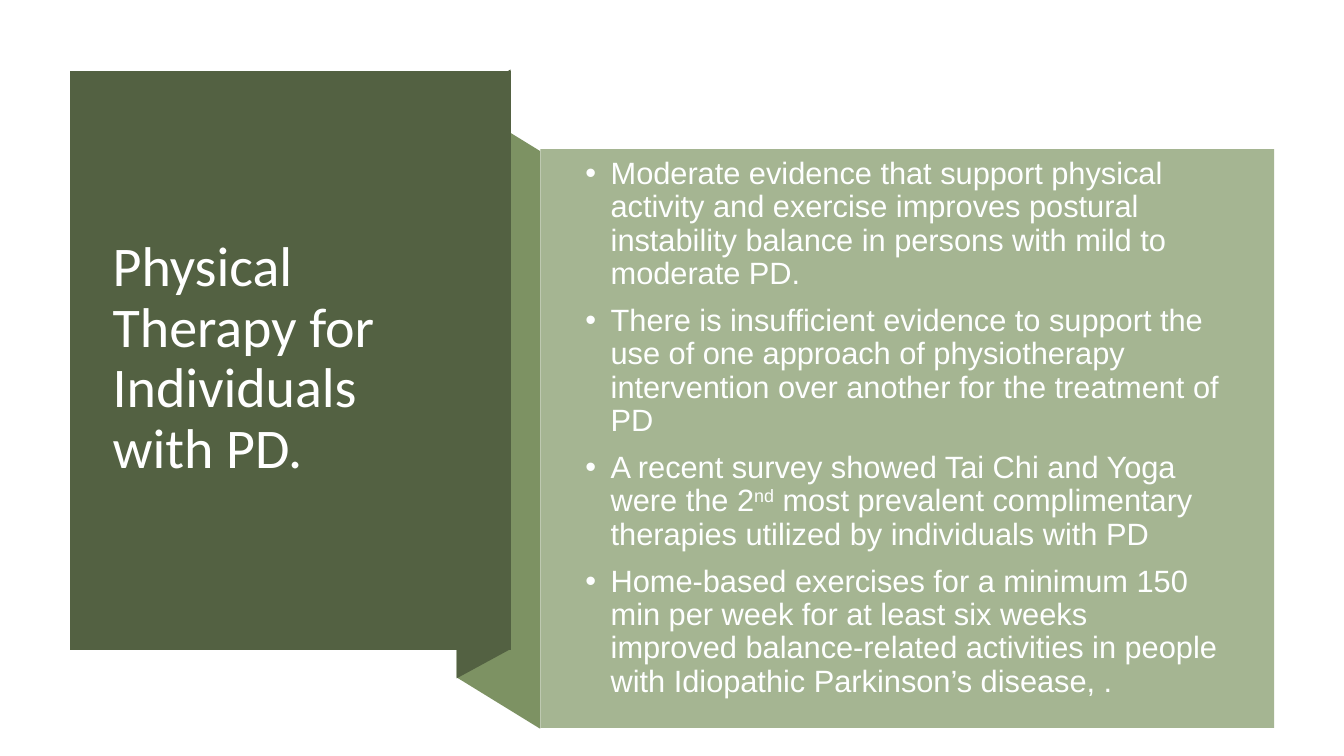
"""Build the slide on physical therapy for individuals with PD."""
from dataclasses import dataclass

import pptx
import pptx.dml.color
import pptx.enum.shapes
import pptx.enum.text
import pptx.oxml
import pptx.oxml.ns
import pptx.util

Pt = pptx.util.Pt
DARK, MID, LIGHT = "536142", "7D9263", "A5B592"


@dataclass(frozen=True)
class Panel:
    """A filled outline given by its corners in points."""
    corners: tuple[tuple[float, float], ...]
    color: str


@dataclass(frozen=True)
class Box:
    """A rectangle in points."""
    left: float
    top: float
    width: float
    height: float

    def lengths(self) -> tuple[int, ...]:
        """Return the rectangle as slide lengths."""
        return tuple(Pt(v) for v in (self.left, self.top, self.width, self.height))


RIBBON = (
    Panel(((385.9, 520.6), (326.2, 483.9), (326.2, 71.3), (385.9, 108)), MID),
    Panel(((364.7, 463.7), (326.2, 484.6), (326.2, 70.6), (364.7, 49.7)), DARK),
    Panel(((50, 50.4), (364.8, 50.4), (364.8, 464.4), (50, 464.4)), DARK),
)
TITLE_AREA = Box(73.4, 77, 267.1, 359.3)
EVIDENCE_PANEL = Box(385.9, 106.6, 524.2, 413.3)
EVIDENCE_AREA = Box(411.1, 135.4, 468.7, 341.3)
EVIDENCE = (
    "Moderate evidence that support physical activity and exercise improves "
    "postural instability balance in persons with mild to moderate PD.",
    "There is insufficient evidence to support the use of one approach of "
    "physiotherapy intervention over another for the treatment of PD",
    "A recent survey showed Tai Chi and Yoga were the 2^nd^ most prevalent "
    "complimentary therapies utilized by individuals with PD",
    "Home-based exercises for a minimum 150 min per week for at least six weeks "
    "improved balance-related activities in people with Idiopathic "
    "Parkinson’s disease, .",
)


def rgb(color: str) -> pptx.dml.color.RGBColor:
    """Turn a hex string into a colour."""
    return pptx.dml.color.RGBColor.from_string(color)


def paint(shape, color: str) -> None:
    """Fill a shape and remove its line and shadow."""
    shape.fill.solid()
    shape.fill.fore_color.rgb = rgb(color)
    shape.line.fill.background()
    shape.shadow.inherit = False


def draw_panel(slide, panel: Panel) -> None:
    """Draw one closed outline."""
    points = [(Pt(x), Pt(y)) for x, y in panel.corners]
    builder = slide.shapes.build_freeform(*points[0], scale=1.0)
    builder.add_line_segments(points[1:], close=True)
    paint(builder.convert_to_shape(), panel.color)


def add_bullet(paragraph, indent: float) -> None:
    """Give a paragraph a hanging round bullet."""
    properties = paragraph._p.get_or_add_pPr()
    properties.set("marL", str(Pt(indent)))
    properties.set("indent", str(-Pt(indent)))
    for tag, attribute, value in (("a:buFont", "typeface", "Arial"),
                                  ("a:buChar", "char", "•")):
        bullet = pptx.oxml.parse_xml(f"<{tag} {pptx.oxml.ns.nsdecls('a')}/>")
        bullet.set(attribute, value)
        properties.append(bullet)


def add_text(slide, area: Box, paragraphs: tuple[str, ...], *, font: str, size: float,
             color: str, space_before: float = 0, bullet_indent: float = 0) -> None:
    """Write paragraphs, with superscripts set between carets."""
    frame = slide.shapes.add_textbox(*area.lengths()).text_frame
    frame.word_wrap = True
    frame.vertical_anchor = pptx.enum.text.MSO_ANCHOR.MIDDLE
    for number, text in enumerate(paragraphs):
        paragraph = frame.add_paragraph() if number else frame.paragraphs[0]
        paragraph.line_spacing = 0.9
        paragraph.space_before = Pt(space_before)
        if bullet_indent:
            add_bullet(paragraph, bullet_indent)
        for position, part in enumerate(text.split("^")):
            run = paragraph.add_run()
            run.text = part
            run.font.name = font
            run.font.size = Pt(size)
            run.font.color.rgb = rgb(color)
            if position % 2:
                run._r.get_or_add_rPr().set("baseline", "30000")


def main() -> None:
    """Build and save the slide."""
    deck = pptx.Presentation()
    deck.slide_width, deck.slide_height = Pt(960), Pt(540)
    slide = deck.slides.add_slide(deck.slide_layouts[6])
    for panel in RIBBON:
        draw_panel(slide, panel)
    add_text(slide, TITLE_AREA, ("Physical Therapy for Individuals with PD.",),
             font="Calibri", size=40, color="FFFFFF")
    backdrop = slide.shapes.add_shape(pptx.enum.shapes.MSO_SHAPE.RECTANGLE,
                                      *EVIDENCE_PANEL.lengths())
    paint(backdrop, LIGHT)
    add_text(slide, EVIDENCE_AREA, EVIDENCE, font="Arial", size=22, color="FEFFFF",
             space_before=10, bullet_indent=18)
    deck.save("out.pptx")


if __name__ == "__main__":
    main()
